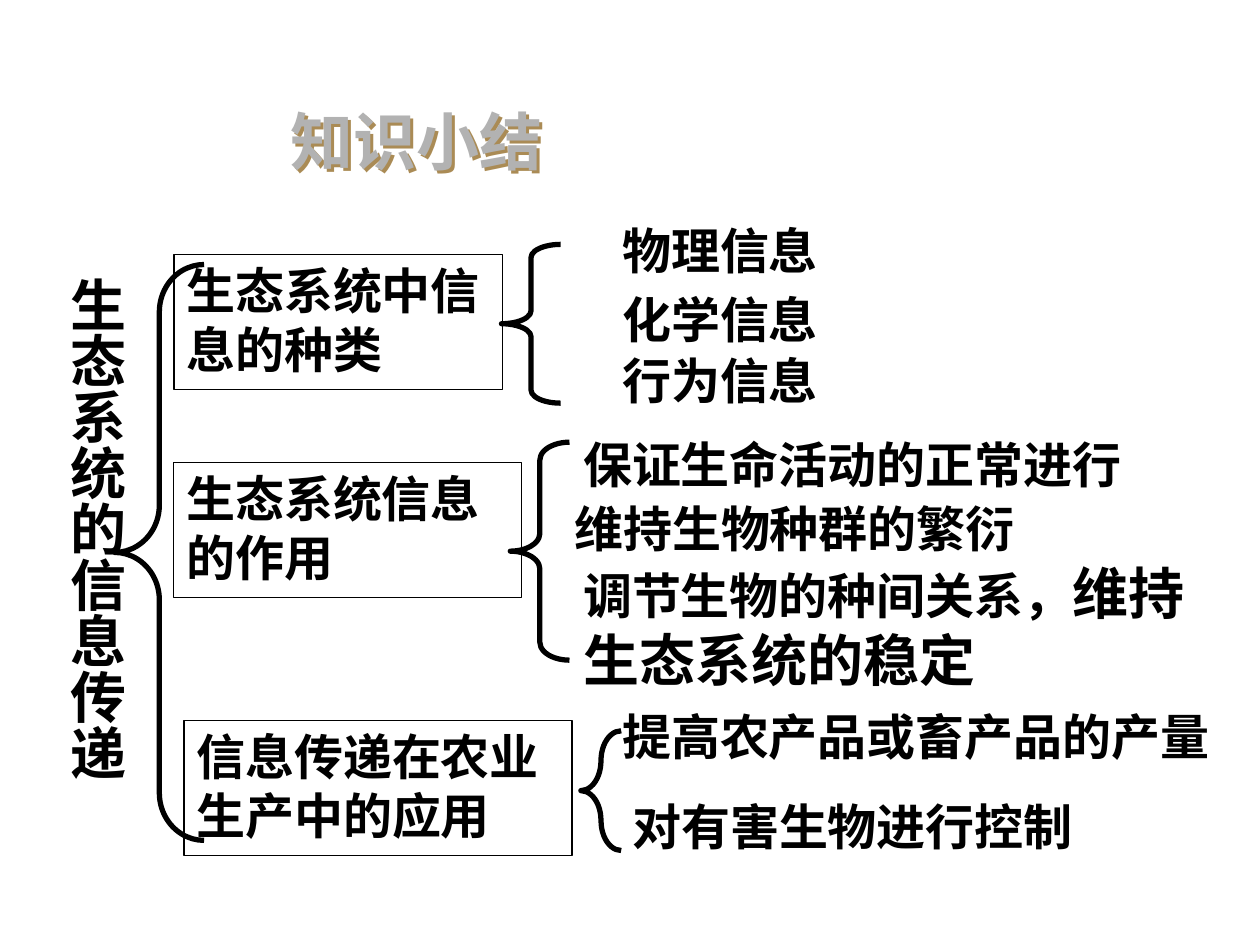
import pptx
import pptx.util
import pptx.dml.color
import pptx.enum.shapes
import pptx.enum.text
import pptx.oxml
import pptx.oxml.ns

COLOURS = {"ink": "000000", "heading": "B2B2B2", "heading_shadow": "875B0D"}
LATIN, CHINESE = "Arial", "Noto Sans CJK SC"
COLUMNS, ROWS = 100, 75
SHAPES = pptx.enum.shapes.MSO_SHAPE

deck = pptx.Presentation()
deck.slide_width, deck.slide_height = pptx.util.Inches(10), pptx.util.Inches(7.5)
COLUMN, ROW = deck.slide_width / COLUMNS, deck.slide_height / ROWS


def place(box):
    """Turn a box in columns and rows into slide lengths."""
    left, top, width, height = box
    return [round(n) for n in (left * COLUMN, top * ROW, width * COLUMN, height * ROW)]


def within(region, box):
    """Move a box from its region's corner to the slide's."""
    return (region[0] + box[0], region[1] + box[1], *box[2:])


def colour(name):
    return pptx.dml.color.RGBColor.from_string(COLOURS[name])


def write(frame, *runs, size=28, font=LATIN, ink="ink", wrap=True, vertical=False,
          align=pptx.enum.text.PP_ALIGN.LEFT):
    """Fill a frame with bold text; a run is a string or a (string, size) pair."""
    frame.word_wrap = wrap
    frame.auto_size = pptx.enum.text.MSO_AUTO_SIZE.NONE
    frame.vertical_anchor = pptx.enum.text.MSO_ANCHOR.TOP
    if vertical:
        frame._txBody.bodyPr.set("vert", "eaVert")
    paragraph = frame.paragraphs[0]
    paragraph.alignment = align
    for entry in runs:
        words, points = entry if isinstance(entry, tuple) else (entry, size)
        run = paragraph.add_run()
        run.text = words
        run.font.size = pptx.util.Pt(points)
        run.font.bold = True
        run.font.name = font
        run.font.color.rgb = colour(ink)
        east_asian = pptx.oxml.parse_xml(
            f'<a:ea {pptx.oxml.ns.nsdecls("a")} typeface="{CHINESE}"/>')
        run._r.rPr.find(pptx.oxml.ns.qn("a:latin")).addnext(east_asian)


def add_text(slide, box, *runs, **style):
    write(slide.shapes.add_textbox(*place(box)).text_frame, *runs, **style)


def add_outline(slide, preset, box, weight):
    shape = slide.shapes.add_shape(preset, *place(box))
    shape.shadow.inherit = False
    shape.fill.background()
    shape.line.color.rgb = colour("ink")
    shape.line.width = pptx.util.Pt(weight)
    return shape


def add_brace(slide, box, curve):
    brace = add_outline(slide, SHAPES.LEFT_BRACE, box, 3)
    brace.adjustments[0] = curve
    brace.adjustments[1] = 0.5


def add_heading(slide, box):
    """Grey heading whose letters cast a brown shadow."""
    heading = slide.shapes.title
    heading.left, heading.top, heading.width, heading.height = place(box)
    write(heading.text_frame, "知识小结", size=36, font=CHINESE, ink="heading",
          wrap=False, align=pptx.enum.text.PP_ALIGN.CENTER)
    heading.fill.background()
    heading.line.fill.background()
    heading._element.spPr.append(pptx.oxml.parse_xml(
        f'<a:effectLst {pptx.oxml.ns.nsdecls("a")}>'
        '<a:outerShdw dist="35560" dir="2700000" algn="ctr" rotWithShape="0">'
        f'<a:srgbClr val="{COLOURS["heading_shadow"]}"><a:alpha val="70000"/></a:srgbClr>'
        '</a:outerShdw></a:effectLst>'))


def add_root(slide, region):
    """Vertical subject with the brace that opens onto the branches."""
    add_text(slide, within(region, (0, 0, 7.3, 45.2)), "生态系统的信息传递",
             size=32, vertical=True)
    add_brace(slide, within(region, (5.6, 0, 7.1, 45.7)), 0.53)


def add_branch(slide, region, topic, topic_size, brace, curve, points, font):
    """Boxed topic, a brace, and the points it opens onto."""
    topic_box = add_outline(slide, SHAPES.RECTANGLE,
                            within(region, (0, 0, *topic_size)), 0.75)
    write(topic_box.text_frame, topic)
    add_brace(slide, within(region, brace), curve)
    for box, *runs in points:
        add_text(slide, within(region, box), *runs, font=font)


def main():
    slide = deck.slides.add_slide(deck.slide_layouts[5])
    add_heading(slide, (13, 7.6, 40.1, 5.2))
    add_root(slide, (3.5, 21, 12.7, 45.7))

    # Kinds of information
    add_branch(slide, (13.8, 20.2), "生态系统中信息的种类", (26.1, 10.7),
               (26, -0.8, 4.7, 12.6), 0.22,
               [((34.6, top, 17.6, 6), words) for top, words in
                ((-3.2, "物理信息"), (2.3, "化学信息"), (7.1, "行为信息"))], LATIN)

    # What the information does
    add_branch(slide, (13.8, 36.7), "生态系统信息的作用", (27.6, 10.7),
               (26.7, -1.6, 4.7, 17.3), 0.3,
               [((31.5, -2.7, 50.4, 5.7), "保证生命活动的正常进行"),
                ((30.8, 2.4, 43.3, 5.7), "维持生物种群的繁衍"),
                ((31.5, 7.1, 51.2, 12), "调节生物的种间关系，",
                 ("维持生态系统的稳定", 32))], CHINESE)

    # Use in farming
    add_branch(slide, (14.6, 57.2), "信息传递在农业生产中的应用", (30.8, 10.7),
               (31.5, 0.8, 3.2, 9.5), 0.75,
               [((33.8, -1.6, 54, 6), "提高农产品或畜产品的产量"),
                ((34.6, 5.5, 39.4, 6), "对有害生物进行控制")], CHINESE)

    deck.save("out.pptx")


if __name__ == "__main__":
    main()
